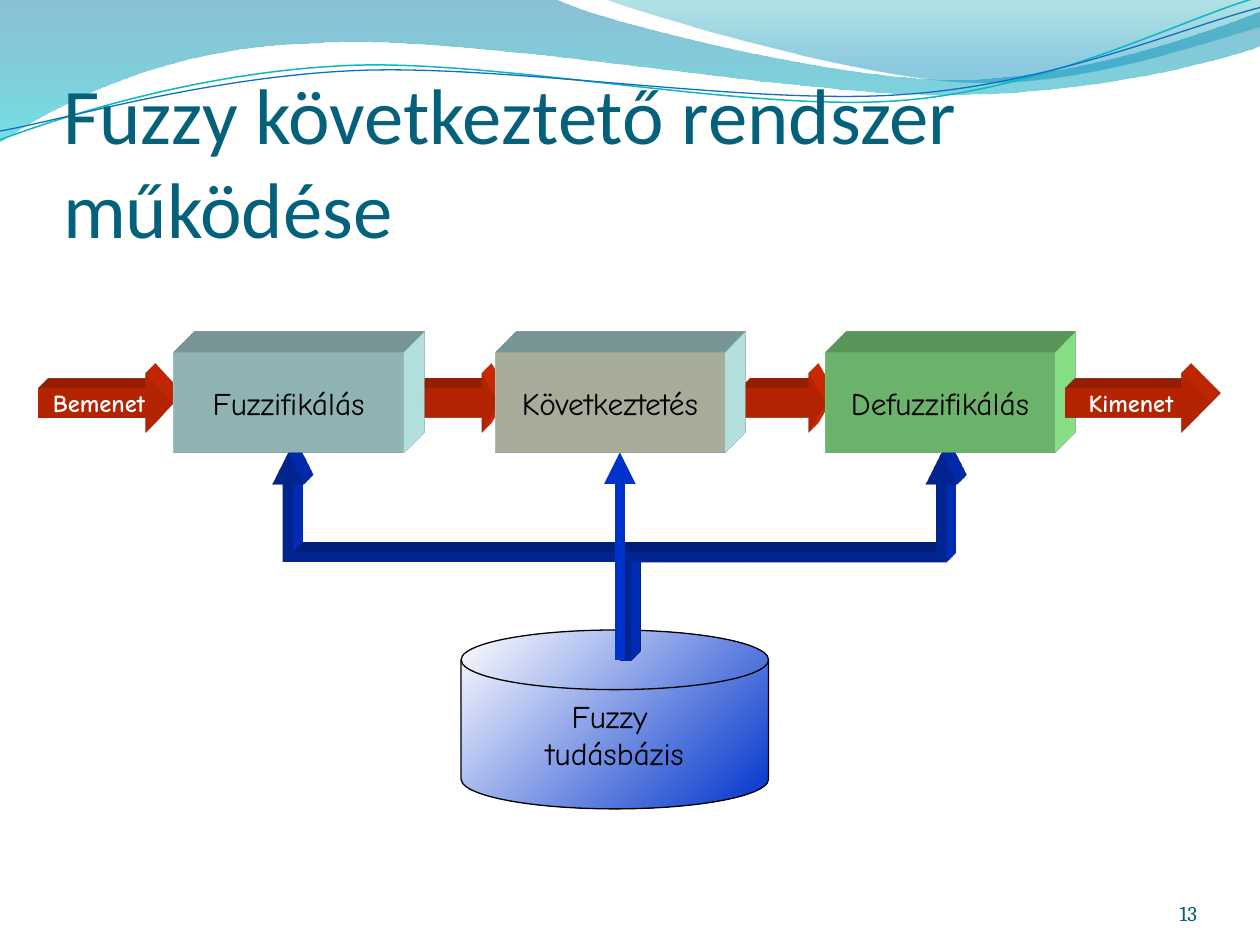
"""Builds a slide on how a fuzzy inference system works."""
from lxml.etree import SubElement
from pptx import Presentation
from pptx.dml.color import RGBColor
from pptx.enum.shapes import MSO_CONNECTOR as CONNECTOR, MSO_SHAPE as SHAPE
from pptx.enum.text import MSO_ANCHOR as ANCHOR, MSO_AUTO_SIZE as AUTO_SIZE, PP_ALIGN as ALIGN
from pptx.oxml.ns import qn
from pptx.util import Inches, Pt

WHITE, BLACK = RGBColor(255, 255, 255), RGBColor(0, 0, 0)
RED, BLUE = RGBColor(0xFF, 0x33, 0x00), RGBColor(0x00, 0x33, 0xCC)
AQUA, CREAM = RGBColor(0xCC, 0xFF, 0xFF), RGBColor(0xED, 0xF3, 0xDB)
GREEN = RGBColor(0x99, 0xFF, 0x99)
TITLE_TEAL, NUMBER_TEAL = RGBColor(0x04, 0x61, 0x7B), RGBColor(0x04, 0x5D, 0x75)
DEEP_BLUE, TURQUOISE = RGBColor(0x00, 0x74, 0xA1), RGBColor(0x00, 0xC6, 0xCF)
SEA_GREEN, SKY_BLUE = RGBColor(0x00, 0xA1, 0xA9), RGBColor(0x00, 0x8B, 0xBF)
WAVE_TEAL, WAVE_BLUE = RGBColor(0x0A, 0xB8, 0xBF), RGBColor(0x0F, 0x6F, 0xC6)
HAND_FONT = "Comic Neue"

BANDS = [
    ([(0, 0), (4.4, -0.01),
      (4.76, 0.17, 6.64, 0.63, 7.58, 0.63), (8.53, 0.63, 9.58, 0.26, 10, 0.09), (10.01, 0.36),
      (9.83, 0.44, 8.7, 0.76, 7.46, 0.75), (6.22, 0.75, 3.82, 0.28, 2.57, 0.34),
      (1.29, 0.36, 0.46, 0.83, -0.01, 1.13)],
     [(0, DEEP_BLUE, 45), (1, TURQUOISE, 55)]),
    ([(4.79, -0.01), (5.09, 0.11, 6.82, 0.62, 7.69, 0.65),
      (8.56, 0.69, 9.61, 0.32, 10, 0.21), (10, 0)],
     [(0, SEA_GREEN, 30), (0.8, SKY_BLUE, 45)]),
]
WAVES = [
    ([(0, 1.11), (0.48, 0.93, 1.58, 0.57, 2.77, 0.52), (3.95, 0.47, 5.93, 0.89, 7.13, 0.8),
      (8.33, 0.71, 9.38, 0.15, 9.98, -0.02)], WAVE_TEAL, 0.85),
    ([(0, 1.04), (0.47, 0.96, 1.64, 0.61, 2.83, 0.56), (4.03, 0.51, 5.97, 0.84, 7.17, 0.75),
      (8.36, 0.67, 9.41, 0.21, 10, 0.06)], WAVE_BLUE, 0.75),
]
BOX_TOP, BOX_WIDTH, BOX_HEIGHT = 2.8, 1.82, 0.79
ARROW_TOP, ARROW_HEIGHT = 2.96, 0.47
STEPS = [
    ("arrow", "", 3.29, 0.67, 0.292),
    ("arrow", "Bemenet", 0.31, 1.06, 0.46),
    ("box", "Fuzzifikálás", 1.38, AQUA, AQUA),
    ("arrow", "", 5.88, 0.67, 0.292),
    ("box", "Defuzzifikálás", 6.55, GREEN, GREEN),
    ("arrow", "Kimenet", 8.46, 1.15, 0.5),
    ("box", "Következtetés", 3.93, CREAM, AQUA),
]
BRANCHES = [((2.8, 3.08, 1.65, 2.68), 270, ["flipV"]),
            ((5.39, 3.17, 1.65, 2.5), 90, ["flipH", "flipV"])]
BOX_DEPTH, ARROW_DEPTH = 0.47, 0.22


def write(shape, text, font=HAND_FONT, size=18, color=BLACK, bold=False,
          align=ALIGN.CENTER, anchor=ANCHOR.MIDDLE, wrap=False, insets=None):
    frame = shape.text_frame
    frame.text, frame.word_wrap, frame.vertical_anchor = text, wrap, anchor
    frame.auto_size = AUTO_SIZE.NONE
    if insets:
        (frame.margin_left, frame.margin_top,
         frame.margin_right, frame.margin_bottom) = map(Inches, insets)
    for paragraph in frame.paragraphs:
        paragraph.alignment = align
        paragraph.font.name, paragraph.font.size = font, Pt(size)
        paragraph.font.bold, paragraph.font.color.rgb = bold, color


def add_gradient(shape, stops, angle):
    shape.fill.gradient()
    shape.fill.gradient_angle = 360 - angle
    for stop, (position, color, opacity) in zip(shape.fill.gradient_stops, stops):
        stop.position, stop.color.rgb = position, color
    elements = shape.element.spPr.iter(qn("a:srgbClr"))
    for element, (position, color, opacity) in zip(elements, stops):
        if opacity < 100:
            SubElement(element, qn("a:alpha"), val=str(opacity * 1000))


def extrude(shape, depth, color):
    properties = shape.element.spPr
    scene = SubElement(properties, qn("a:scene3d"))
    SubElement(scene, qn("a:camera"), prst="legacyObliqueTopRight")
    SubElement(scene, qn("a:lightRig"), rig="legacyFlat3", dir="b")
    solid = SubElement(properties, qn("a:sp3d"), extrusionH=str(Inches(depth)),
                       prstMaterial="legacyMatte")
    for bevel in ("a:bevelT", "a:bevelB"):
        SubElement(solid, qn(bevel), w="13500", h="13500", prst="angle")
    SubElement(SubElement(solid, qn("a:extrusionClr")), qn("a:srgbClr"), val=str(color))


def add_curve(slide, points, close):
    anchors = [(Inches(point[-2]), Inches(point[-1])) for point in points]
    builder = slide.shapes.build_freeform(*anchors[0])
    builder.add_line_segments(anchors[1:], close=close)
    shape = builder.convert_to_shape()
    shape.shadow.inherit = False
    segments = list(shape.element.spPr.iter(qn("a:lnTo")))
    for segment, point in zip(segments, points[1:]):
        if len(point) == 6:
            curve = SubElement(segment.getparent(), qn("a:cubicBezTo"))
            for x, y in zip(point[::2], point[1::2]):
                SubElement(curve, qn("a:pt"), x=str(Inches(x) - shape.left),
                           y=str(Inches(y) - shape.top))
            segment.getparent().replace(segment, curve)
    return shape


def add_block(slide, kind, place, color=None):
    shape = slide.shapes.add_shape(kind, *map(Inches, place))
    shape.shadow.inherit = False
    shape.line.fill.background()
    if color is not None:
        shape.fill.solid()
        shape.fill.fore_color.rgb = color
    return shape


def add_link(slide, kind, *ends):
    connector = slide.shapes.add_connector(kind, *map(Inches, ends))
    connector.line.color.rgb, connector.line.width = BLUE, Pt(6)
    line = connector.element.spPr.find(qn("a:ln"))
    SubElement(line, qn("a:miter"), lim="800000")
    SubElement(line, qn("a:tailEnd"), type="triangle")
    SubElement(connector.element.spPr, qn("a:effectLst"))
    return connector


def main():
    presentation = Presentation()
    presentation.slide_width, presentation.slide_height = Inches(10), Inches(7.5)
    slide = presentation.slides.add_slide(presentation.slide_layouts[5])

    for points, stops in BANDS:
        band = add_curve(slide, points, True)
        band.line.fill.background()
        add_gradient(band, stops, 90)
    for points, color, width in WAVES:
        wave = add_curve(slide, points, False)
        wave.fill.background()
        wave.line.color.rgb, wave.line.width = color, Pt(width)

    title = slide.shapes.title
    title.left, title.top, title.width, title.height = map(Inches, (0.5, 0.77, 9.08, 1.25))
    write(title, "Fuzzy következtető rendszer működése", font="Calibri", size=45,
          color=TITLE_TEAL, align=ALIGN.LEFT, anchor=ANCHOR.BOTTOM, wrap=True,
          insets=(0, 0.05, 0, 0))
    slide.shapes._spTree.append(title.element)
    number = slide.shapes.add_textbox(*map(Inches, (8.67, 6.95, 0.83, 0.4)))
    write(number, "13", font="Cambria", size=12, color=NUMBER_TEAL, align=ALIGN.RIGHT,
          anchor=ANCHOR.BOTTOM, wrap=True, insets=(0, 0, 0, 0))

    store = add_block(slide, SHAPE.FLOWCHART_MAGNETIC_DISK, (3.66, 5, 2.44, 1.42))
    add_gradient(store, [(0, WHITE, 100), (1, BLUE, 100)], 45)
    store.line.color.rgb, store.line.width = BLACK, Pt(0.75)
    write(store, "Fuzzy \ntudásbázis")

    for (left, top, width, height), rotation, flips in BRANCHES:
        branch = add_link(slide, CONNECTOR.ELBOW, left, top, left + width, top + height)
        frame = branch.element.spPr.find(qn("a:xfrm"))
        frame.set("rot", str(rotation * 60000))
        for flip in flips:
            frame.set(flip, "1")
        extrude(branch, ARROW_DEPTH, BLUE)
    add_link(slide, CONNECTOR.STRAIGHT, 4.92, 5.24, 4.92, 3.59)

    for kind, text, left, *details in STEPS:
        if kind == "box":
            color, side_color = details
            box = add_block(slide, SHAPE.RECTANGLE, (left, BOX_TOP, BOX_WIDTH, BOX_HEIGHT), color)
            write(box, text)
            extrude(box, BOX_DEPTH, side_color)
        else:
            width, head = details
            arrow = add_block(slide, SHAPE.RIGHT_ARROW, (left, ARROW_TOP, width, ARROW_HEIGHT), RED)
            arrow.adjustments[1] = head
            if text:
                write(arrow, text, size=14, color=WHITE, bold=True)
            extrude(arrow, ARROW_DEPTH, RED)
    presentation.save("out.pptx")


if __name__ == "__main__":
    main()
